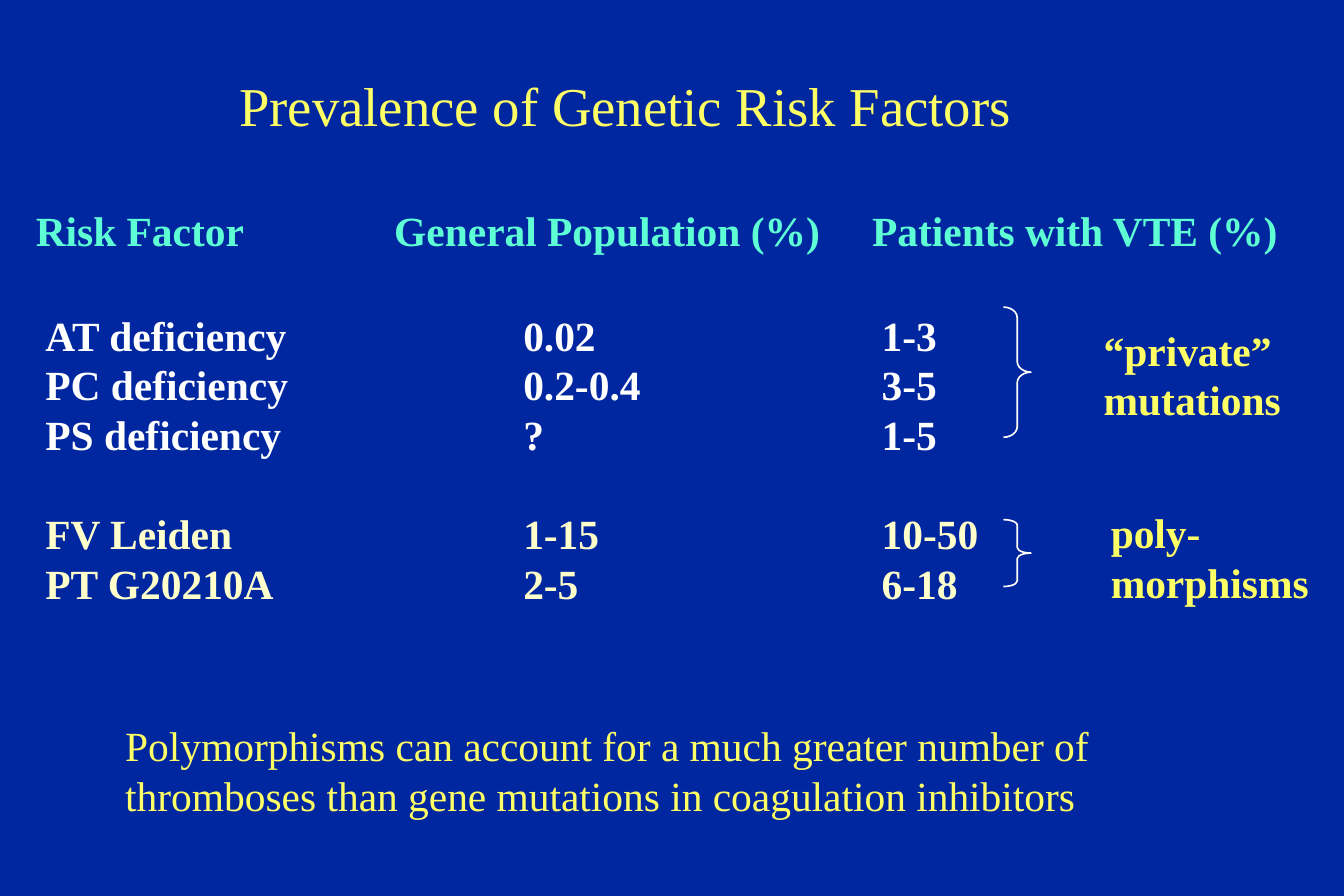
from pptx import Presentation
from pptx.dml.color import RGBColor
from pptx.enum.shapes import MSO_SHAPE
from pptx.enum.text import MSO_ANCHOR, MSO_AUTO_SIZE, PP_ALIGN
from pptx.util import Inches, Pt

COLORS = {
    "background": "00279F",
    "yellow": "FFFF66",
    "heading": "5FFFD5",
    "deficiency": "FFFFFF",
    "polymorphism": "FFFFCC",
}
LINE = 0.415  # height of one text line, in inches
TABLE_LEFT, TABLE_TOP = 0.3, 1.72
COLUMN_WIDTHS = [3, 4, 3.5]
VALUE_INDENTS = [0.08, 1.08, 0.08]


def style(paragraph, color, bold=False, size=25):
    paragraph.font.name = "Times New Roman"
    paragraph.font.size = Pt(size)
    paragraph.font.bold = bold
    paragraph.font.color.rgb = RGBColor.from_string(COLORS[color])


def add_lines(left, top, width, lines, bold):
    """Add a yellow text box with one paragraph per line."""
    box = slide.shapes.add_textbox(
        Inches(left), Inches(top), Inches(width), Inches(2 * LINE + 0.1))
    frame = box.text_frame
    frame.word_wrap = False
    frame.vertical_anchor = MSO_ANCHOR.MIDDLE
    frame.text = "\n".join(lines)
    for paragraph in frame.paragraphs:
        style(paragraph, "yellow", bold)
        paragraph.line_spacing = Pt(LINE * 72)


prs = Presentation()
prs.slide_width, prs.slide_height = Inches(11.25), Inches(7.5)
slide = prs.slides.add_slide(prs.slide_layouts[5])
slide.background.fill.solid()
slide.background.fill.fore_color.rgb = RGBColor.from_string(COLORS["background"])

# Title
title = slide.shapes.title
title.left, title.top = Inches(1.87), Inches(0.55)
title.width, title.height = Inches(6.73), Inches(0.66)
title.text_frame.text = "Prevalence of Genetic Risk Factors"
title.text_frame.word_wrap = False
title.text_frame.auto_size = MSO_AUTO_SIZE.NONE
title.text_frame.vertical_anchor = MSO_ANCHOR.MIDDLE
title.text_frame.paragraphs[0].alignment = PP_ALIGN.CENTER
style(title.text_frame.paragraphs[0], "yellow", size=33)

# Prevalence table: taller rows set the groups apart
rows = [
    ("heading", 0.88, ["Risk Factor", "General Population (%)", "Patients with VTE (%)"]),
    ("deficiency", LINE, ["AT deficiency", "0.02", "1-3"]),
    ("deficiency", LINE, ["PC deficiency", "0.2-0.4", "3-5"]),
    ("deficiency", LINE, ["PS deficiency", "?", "1-5"]),
    ("polymorphism", 2 * LINE, ["FV Leiden", "1-15", "10-50"]),
    ("polymorphism", LINE, ["PT G20210A", "2-5", "6-18"]),
]
table_frame = slide.shapes.add_table(
    len(rows), len(COLUMN_WIDTHS), Inches(TABLE_LEFT), Inches(TABLE_TOP),
    Inches(sum(COLUMN_WIDTHS)), Inches(sum(height for _, height, _ in rows)))
table = table_frame.table
table.horz_banding = False
# "No Style, No Grid"
table._tbl.tblPr[0].text = "{2D5ABB26-0587-4C30-8999-92F81FD0307C}"
for column, width in zip(table.columns, COLUMN_WIDTHS):
    column.width = Inches(width)
for row, (group, height, texts) in zip(table.rows, rows):
    row.height = Inches(height)
    is_heading = group == "heading"
    for cell, text, indent in zip(row.cells, texts, VALUE_INDENTS):
        cell.fill.background()
        cell.margin_left = Inches(0 if is_heading else indent)
        cell.margin_right = cell.margin_top = cell.margin_bottom = 0
        cell.vertical_anchor = MSO_ANCHOR.TOP if is_heading else MSO_ANCHOR.BOTTOM
        cell.text = text
        paragraph = cell.text_frame.paragraphs[0]
        style(paragraph, group, bold=True)
        paragraph.line_spacing = Pt(LINE * 72)

# Conclusion and group labels
add_lines(0.95, 5.98, 8.46, [
    "Polymorphisms can account for a much greater number of",
    "thromboses than gene mutations in coagulation inhibitors"], bold=False)
add_lines(9.14, 2.67, 1.69, ["“private”", "mutations"], bold=True)
add_lines(9.2, 4.2, 1.86, ["poly-", "morphisms"], bold=True)

# Braces beside the two groups
for top, height, curve in [(2.57, 1.09, 0.39), (4.35, 0.56, 0.2)]:
    brace = slide.shapes.add_shape(
        MSO_SHAPE.RIGHT_BRACE, Inches(8.4), Inches(top), Inches(0.23), Inches(height))
    brace.adjustments[0] = curve
    brace.fill.background()
    brace.line.color.rgb = RGBColor.from_string(COLORS["deficiency"])
    brace.line.width = Pt(1)
    brace.shadow.inherit = False

prs.save("out.pptx")
